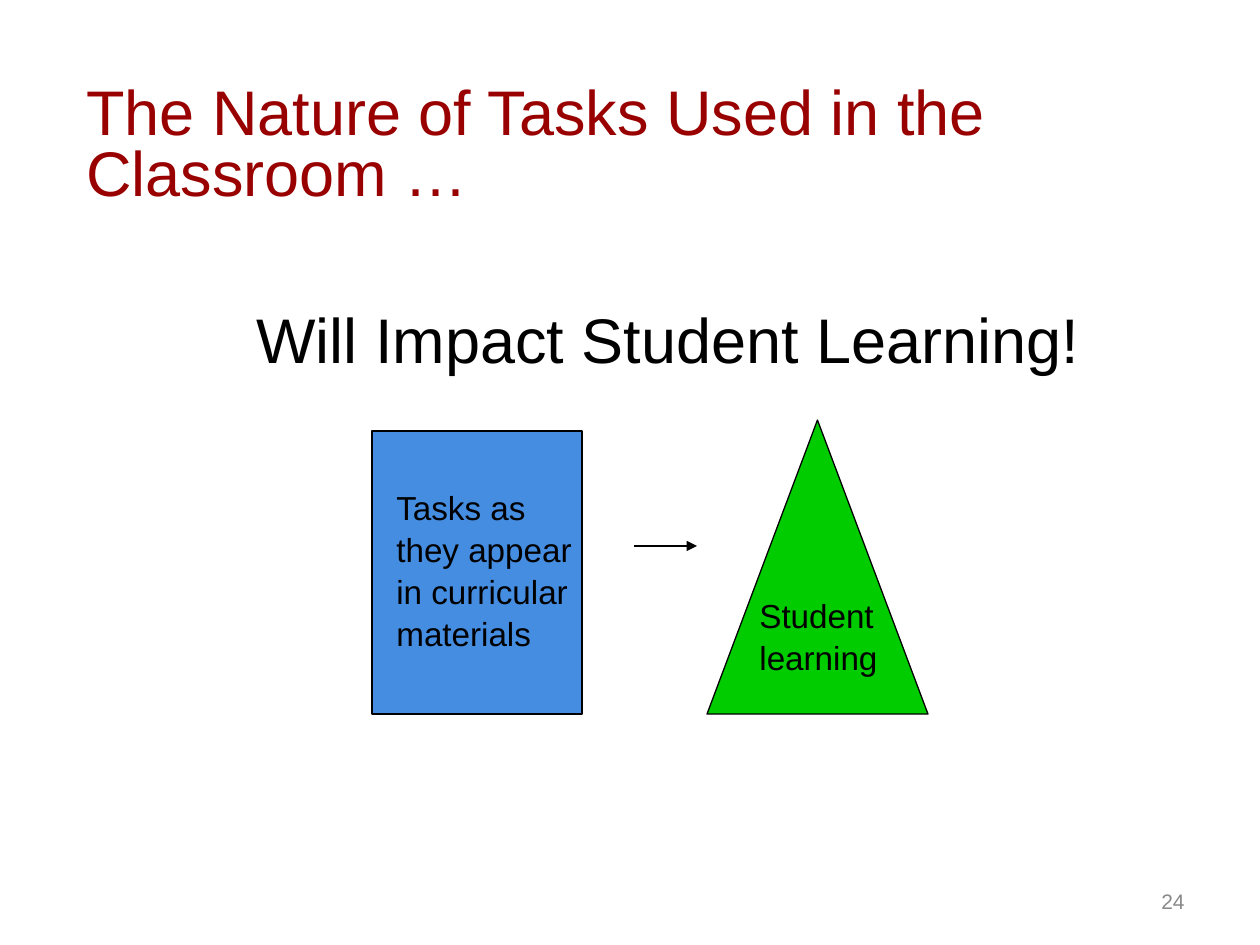
"""Build a slide linking curricular tasks to student learning."""
from dataclasses import dataclass

from lxml import etree
from pptx import Presentation
from pptx import util as u
from pptx.dml.color import RGBColor
from pptx.enum import shapes, text
from pptx.oxml.ns import qn

PX_PER_INCH = 126
BLACK = "000000"


@dataclass(frozen=True)
class Figure:
    """A filled and outlined preset shape."""
    kind: shapes.MSO_SHAPE
    area: tuple[int, int, int, int]
    fill: str


@dataclass(frozen=True)
class Label:
    """A text box with one paragraph per line."""
    area: tuple[int, int, int, int]
    lines: tuple[str, ...]
    size: int
    color: str = BLACK
    wrap: bool = False
    spacing: float = 1.0
    anchor: text.MSO_ANCHOR = text.MSO_ANCHOR.TOP
    align: text.PP_ALIGN = text.PP_ALIGN.LEFT


FIGURES = (
    Figure(shapes.MSO_SHAPE.RECTANGLE, (372, 431, 210, 283), "448DE1"),
    Figure(shapes.MSO_SHAPE.ISOSCELES_TRIANGLE, (707, 420, 221, 294), "00CC00"),
)
LABELS = (
    Label((74, 94, 1018, 108), ("The Nature of Tasks Used in the Classroom …",), 36,
          "990000", True, 0.8, text.MSO_ANCHOR.MIDDLE),
    Label((384, 479, 210, 171),
          ("Tasks as", "they appear", "in curricular", "materials"), 19, spacing=1.05),
    Label((747, 587, 145, 92), ("Student", "learning"), 19, spacing=1.05),
    Label((244, 294, 848, 88), ("Will Impact Student Learning!",), 36),
    Label((903, 876, 294, 50), ("24",), 12, "898989", True,
          anchor=text.MSO_ANCHOR.MIDDLE, align=text.PP_ALIGN.RIGHT),
)


def px(length: int) -> u.Emu:
    """Turn pixels into EMU."""
    return u.Emu(round(length * 914400 / PX_PER_INCH))


def rgb(color: str) -> RGBColor:
    """Turn a hex string into a colour."""
    return RGBColor.from_string(color)


def draw_figure(page, figure: Figure) -> None:
    """Draw a preset shape with a thin black outline."""
    shape = page.shapes.add_shape(figure.kind, *map(px, figure.area))
    shape.shadow.inherit = False
    shape.fill.solid()
    shape.fill.fore_color.rgb = rgb(figure.fill)
    shape.line.color.rgb = rgb(BLACK)
    shape.line.width = u.Pt(0.75)


def draw_label(page, label: Label) -> None:
    """Draw a text box line by line."""
    box = page.shapes.add_textbox(*map(px, label.area))
    frame = box.text_frame
    frame.word_wrap = label.wrap
    frame.vertical_anchor = label.anchor
    for index, line in enumerate(label.lines):
        para = frame.add_paragraph() if index else frame.paragraphs[0]
        para.alignment = label.align
        para.line_spacing = label.spacing
        span = para.add_run()
        span.text = line
        span.font.name = "Arial"
        span.font.size = u.Pt(label.size)
        span.font.color.rgb = rgb(label.color)


def draw_arrow(page, left: int, right: int, top: int) -> None:
    """Draw a horizontal arrow pointing right."""
    arrow = page.shapes.add_connector(
        shapes.MSO_CONNECTOR.STRAIGHT, px(left), px(top), px(right), px(top))
    arrow.line.color.rgb = rgb(BLACK)
    arrow.line.width = u.Pt(1.5)
    etree.SubElement(arrow.line._get_or_add_ln(), qn("a:tailEnd"), type="triangle")
    etree.SubElement(arrow._element.spPr, qn("a:effectLst"))


def main() -> None:
    """Build and save the deck."""
    deck = Presentation()
    deck.slide_width, deck.slide_height = px(1260), px(945)
    page = deck.slides.add_slide(deck.slide_layouts[6])
    for figure in FIGURES:
        draw_figure(page, figure)
    draw_arrow(page, 634, 697, 546)
    for label in LABELS:
        draw_label(page, label)
    deck.save("out.pptx")


if __name__ == "__main__":
    main()
